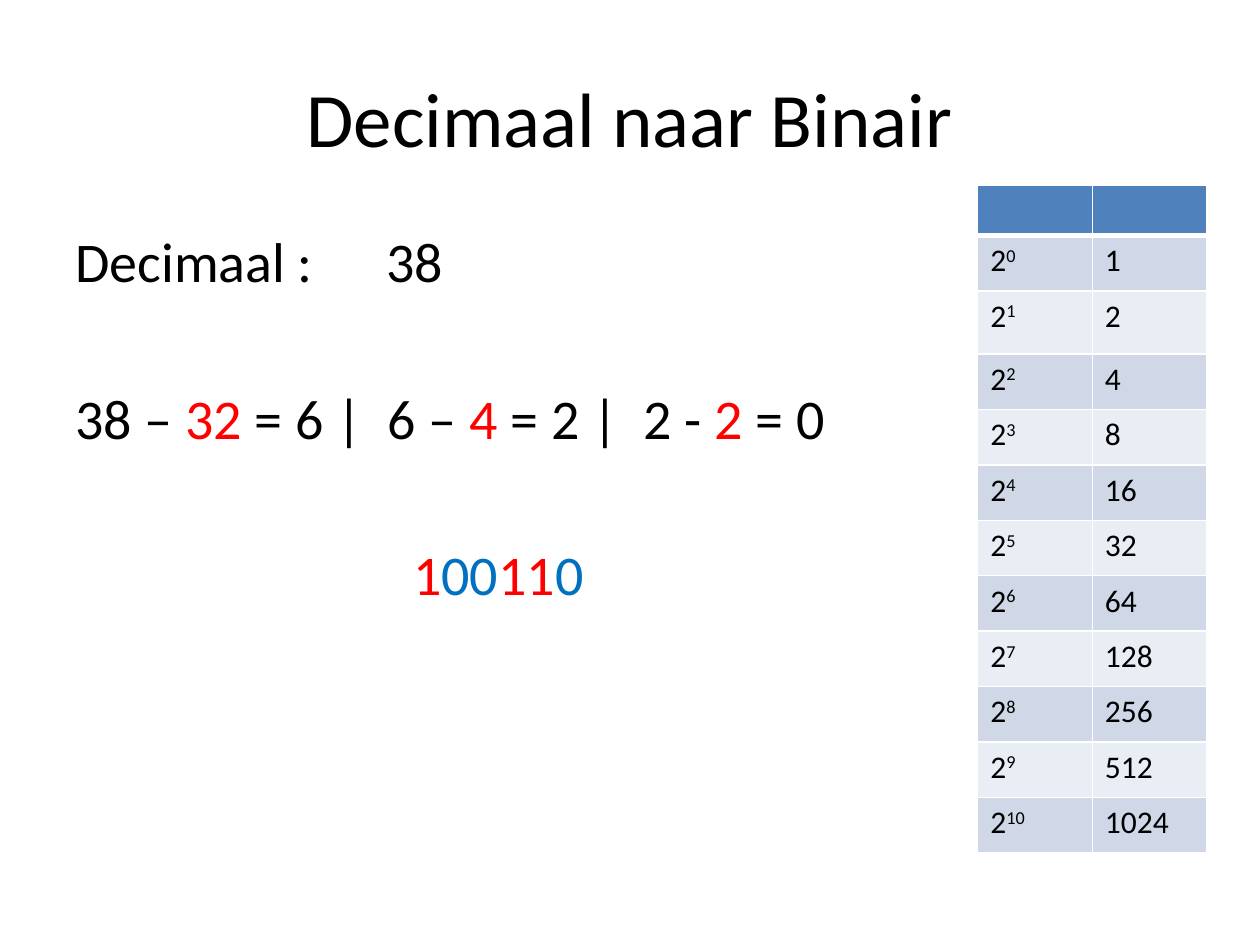
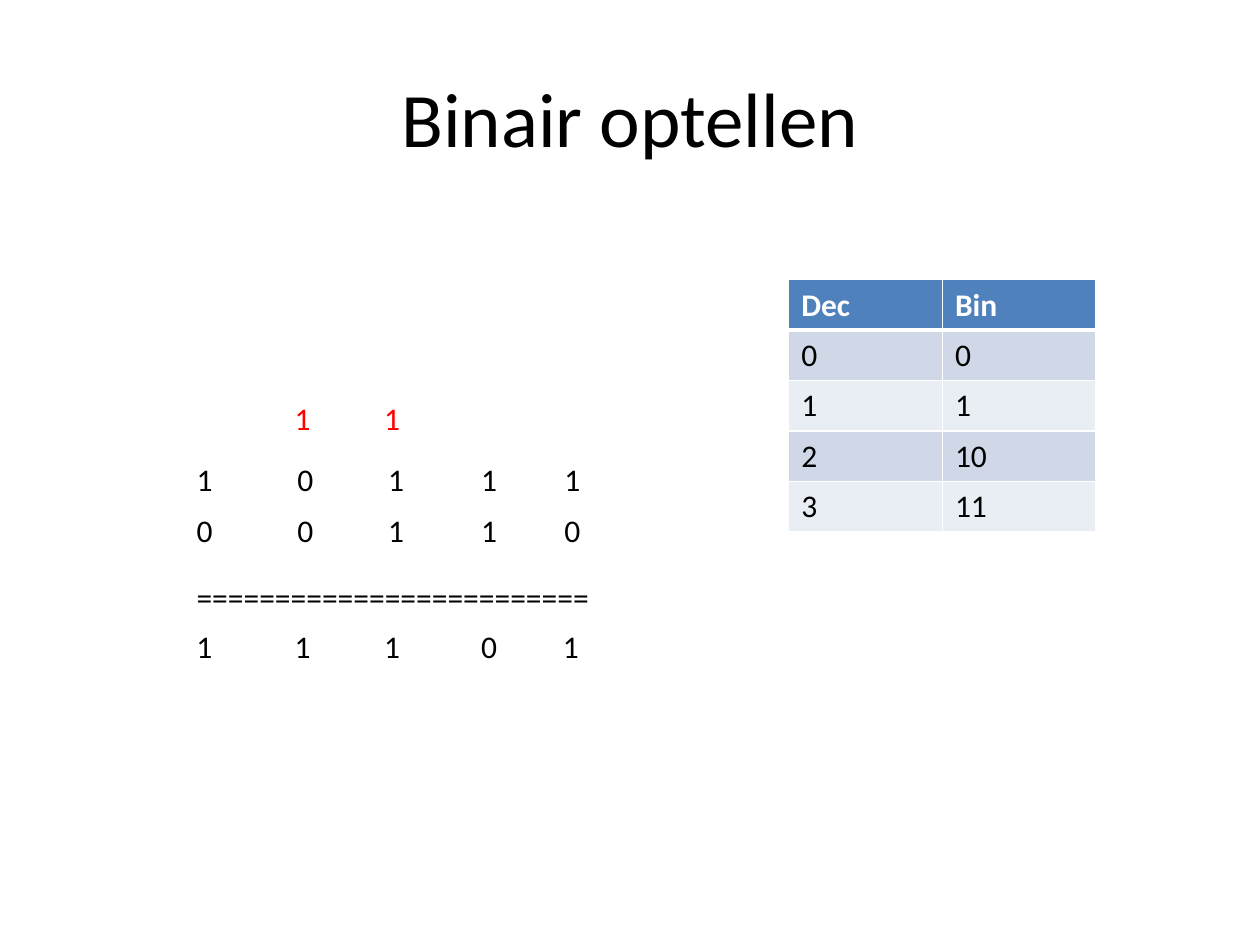
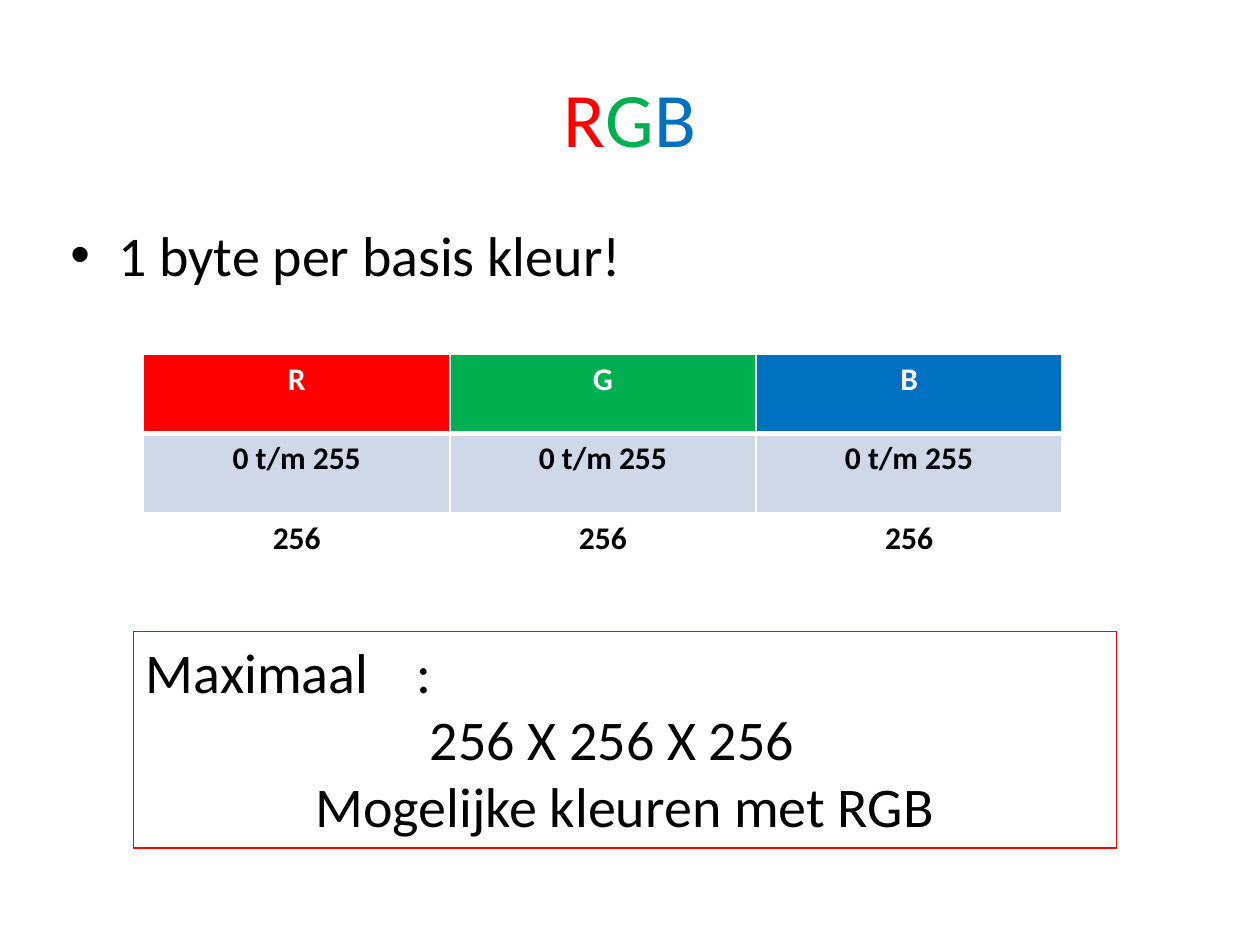
from lxml import etree
from pptx import Presentation
from pptx.dml.color import RGBColor
from pptx.enum.shapes import MSO_SHAPE
from pptx.enum.text import MSO_ANCHOR, MSO_AUTO_SIZE, PP_ALIGN
from pptx.oxml.ns import qn
from pptx.util import Inches, Pt

BLACK = RGBColor(0x00, 0x00, 0x00)
WHITE = RGBColor(0xFF, 0xFF, 0xFF)
RED = RGBColor(0xFF, 0x00, 0x00)
GREEN = RGBColor(0x00, 0xB0, 0x50)
BLUE = RGBColor(0x00, 0x70, 0xC0)
HEADER = RGBColor(0x4F, 0x81, 0xBD)
BANDS = [RGBColor(0xD0, 0xD8, 0xE8), RGBColor(0xE9, 0xED, 0xF4)]
FONT = "Calibri"
TITLE_SIZE, BODY_SIZE, SMALL_SIZE = 44, 32, 18


def add_runs(paragraph, size, *runs, bold=False):
    """Append (text, colour) runs; a third item makes the run superscript."""
    for text, color, *superscript in runs:
        run = paragraph.add_run()
        run.text = text
        run.font.name = FONT
        run.font.size = Pt(size)
        run.font.bold = bold
        run.font.color.rgb = color
        if superscript:
            run.font._element.set("baseline", "30000")


def add_grid(slide, left, top, widths, heights, rows, fills, ruled=True):
    """Add a table; rows hold runs per cell, fills one colour (or None) per cell."""
    frame = slide.shapes.add_table(
        len(heights), len(widths), Inches(left), Inches(top),
        Inches(sum(widths)), Inches(sum(heights)))
    table = frame.table
    table.first_row = table.horz_banding = False
    for column, width in zip(table.columns, widths):
        column.width = Inches(width)
    for row_index, (row, height) in enumerate(zip(rows, heights)):
        table.rows[row_index].height = Inches(height)
        for column_index, runs in enumerate(row):
            cell = table.cell(row_index, column_index)
            paragraph = cell.text_frame.paragraphs[0]
            paragraph.font.size = Pt(SMALL_SIZE)
            add_runs(paragraph, SMALL_SIZE, *runs, bold=ruled and row_index == 0)
            if ruled:
                properties = cell._tc.get_or_add_tcPr()
                for side in ("lnL", "lnR", "lnT", "lnB"):
                    thick = (row_index == 0 and side == "lnB") or (row_index == 1 and side == "lnT")
                    line = etree.SubElement(properties, qn(f"a:{side}"), w=str(Pt(3 if thick else 1)))
                    solid = etree.SubElement(line, qn("a:solidFill"))
                    etree.SubElement(solid, qn("a:srgbClr"), val=str(WHITE))
            color = fills[row_index][column_index]
            if color is None:
                cell.fill.background()
            else:
                cell.fill.solid()
                cell.fill.fore_color.rgb = color
    return table


presentation = Presentation()
presentation.slide_width = Inches(10)
presentation.slide_height = Inches(7.5)

titles = [
    [("Decimaal naar Binair", BLACK)],
    [("Binair optellen", BLACK)],
    [("R", RED), ("G", GREEN), ("B", BLUE)],
]
for title in titles:
    slide = presentation.slides.add_slide(presentation.slide_layouts[6])
    frame = slide.shapes.add_textbox(Inches(0.5), Inches(0.3), Inches(9), Inches(1.25)).text_frame
    frame.word_wrap = True
    frame.vertical_anchor = MSO_ANCHOR.MIDDLE
    frame.paragraphs[0].alignment = PP_ALIGN.CENTER
    add_runs(frame.paragraphs[0], TITLE_SIZE, *title)
conversion_slide, addition_slide, rgb_slide = presentation.slides

# Body texts of the first and last slide
conversion_body = conversion_slide.shapes.add_textbox(
    Inches(0.5), Inches(1.75), Inches(9), Inches(4.95)).text_frame
rgb_body = rgb_slide.shapes.add_textbox(
    Inches(0.46), Inches(1.7), Inches(9), Inches(4.95)).text_frame
conversion_body.word_wrap = rgb_body.word_wrap = True

conversion_lines = [
    [("Decimaal :\t38", BLACK)],
    [("38 – ", BLACK), ("32", RED), (" = 6 |  6 – ", BLACK), ("4", RED),
     (" = 2 |  2 - ", BLACK), ("2", RED), (" = 0", BLACK)],
    [("\t", BLUE), ("1", RED), ("00", BLUE), ("11", RED), ("0", BLUE)],
]
for index, runs in enumerate(conversion_lines):
    paragraph = conversion_body.add_paragraph() if index else conversion_body.paragraphs[0]
    paragraph.space_before = Pt(51 if index else 0)
    add_runs(paragraph, BODY_SIZE, *runs)

bullet_paragraph = rgb_body.paragraphs[0]
add_runs(bullet_paragraph, BODY_SIZE, ("1 byte per basis kleur!", BLACK))
properties = bullet_paragraph._p.get_or_add_pPr()
properties.set("marL", str(Inches(0.38)))
properties.set("indent", str(Inches(-0.38)))
etree.SubElement(properties, qn("a:buFont"), typeface="Arial")
etree.SubElement(properties, qn("a:buChar"), char="•")

# Powers of two
power_rows = [[[], []]]
power_fills = [[HEADER] * 2]
for exponent in range(11):
    power_rows.append([[("2", BLACK), (str(exponent), BLACK, True)], [(str(2 ** exponent), BLACK)]])
    power_fills.append([BANDS[exponent % 2]] * 2)
add_grid(conversion_slide, 7.76, 1.47, [0.91] * 2, [0.39, 0.44, 0.5] + [0.44] * 9,
         power_rows, power_fills)

# Decimal and binary digits
digit_rows = [[[("Dec", WHITE)], [("Bin", WHITE)]]]
digit_fills = [[HEADER] * 2]
for number in range(4):
    digit_rows.append([[(str(number), BLACK)], [(f"{number:b}", BLACK)]])
    digit_fills.append([BANDS[number % 2]] * 2)
add_grid(addition_slide, 6.26, 2.22, [1.22] * 2, [0.39] + [0.4] * 4, digit_rows, digit_fills)

# Binary addition: terms in a table, carries and sum in text boxes
empty_row = [[]] * 5
term_rows = [[[(digit, BLACK)] for digit in term] for term in ("10111", "00110")]
rule_row = [[("=" * 25, BLACK)]] + [[]] * 4
addition_table = add_grid(
    addition_slide, 1.46, 3.2, [0.8, 0.72, 0.74, 0.66, 1.02], [0.41, 0.41, 0.53, 0.28, 0.41],
    [empty_row, *term_rows, rule_row, empty_row], [[None] * 5] * 5, ruled=False)
addition_table.cell(3, 0).merge(addition_table.cell(3, 4))

digit_lefts = [1.46, 2.24, 2.95, 3.72, 4.37]
carries = zip(digit_lefts[1:3], "11")
total = zip(digit_lefts, "11101")
for top, color, digits in [(3.12, RED, carries), (4.93, BLACK, total)]:
    for left, digit in digits:
        frame = addition_slide.shapes.add_textbox(
            Inches(left), Inches(top), Inches(0.26), Inches(0.4)).text_frame
        frame.word_wrap = True
        frame.auto_size = MSO_AUTO_SIZE.SHAPE_TO_FIT_TEXT
        add_runs(frame.paragraphs[0], SMALL_SIZE, (digit, color))

# Colour channels
channel_rows = [[[(letter, WHITE)] for letter in "RGB"]]
for text in ("0 t/m 255", "256"):
    channel_rows.append([[(text, BLACK)]] * 3)
channel_table = add_grid(
    rgb_slide, 1.14, 2.81, [2.43] * 3, [0.63] * 3, channel_rows,
    [[RED, GREEN, BLUE], [BANDS[0]] * 3, [None] * 3])
for cell in channel_table.iter_cells():
    paragraph = cell.text_frame.paragraphs[0]
    paragraph.alignment = PP_ALIGN.CENTER
    paragraph.runs[0].font.bold = True

# Number of possible colours
maximum_box = rgb_slide.shapes.add_shape(
    MSO_SHAPE.RECTANGLE, Inches(1.06), Inches(5.01), Inches(7.8), Inches(1.72))
maximum_box.shadow.inherit = False
maximum_box.fill.background()
maximum_box.line.color.rgb = RED
maximum_box.line.width = Pt(0.75)
maximum_frame = maximum_box.text_frame
maximum_frame.word_wrap = True
maximum_frame.auto_size = MSO_AUTO_SIZE.SHAPE_TO_FIT_TEXT
maximum_frame.vertical_anchor = MSO_ANCHOR.TOP
for index, text in enumerate(["Maximaal\t:", "256 X 256 X 256  ", "Mogelijke kleuren met RGB"]):
    paragraph = maximum_frame.add_paragraph() if index else maximum_frame.paragraphs[0]
    paragraph.alignment = PP_ALIGN.CENTER if index else PP_ALIGN.LEFT
    add_runs(paragraph, BODY_SIZE, (text, BLACK))

# Tab stops
for paragraph, position in [
    (conversion_body.paragraphs[0], 2.47),
    (conversion_body.paragraphs[2], 2.68),
    (maximum_frame.paragraphs[0], 2.15),
]:
    tabs = etree.SubElement(paragraph._p.get_or_add_pPr(), qn("a:tabLst"))
    etree.SubElement(tabs, qn("a:tab"), pos=str(Inches(position)), algn="l")

presentation.save("out.pptx")
